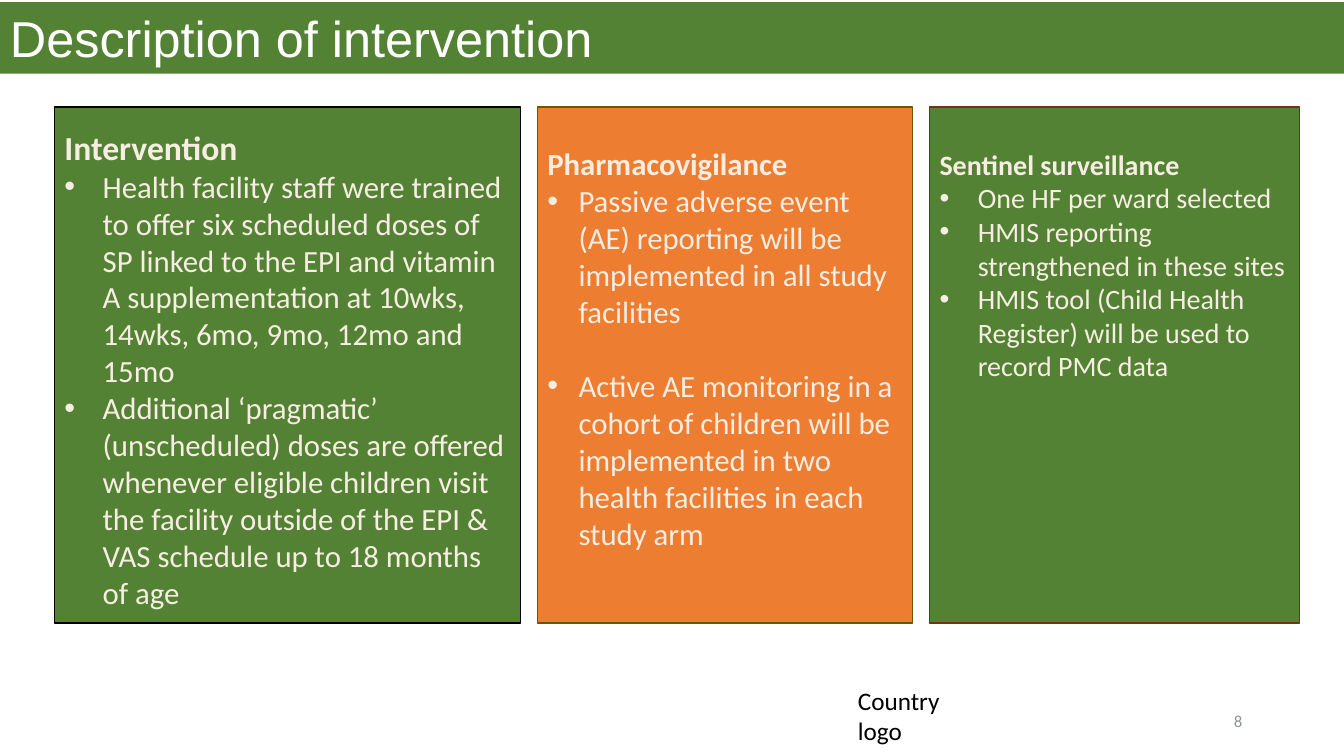
from lxml import etree
from pptx import Presentation
from pptx.dml.color import RGBColor
from pptx.enum.shapes import MSO_SHAPE
from pptx.enum.text import MSO_ANCHOR, PP_ALIGN
from pptx.oxml.ns import qn
from pptx.util import Inches, Pt

RECT = MSO_SHAPE.RECTANGLE
TOP, MIDDLE = MSO_ANCHOR.TOP, MSO_ANCHOR.MIDDLE
LEFT, RIGHT = PP_ALIGN.LEFT, PP_ALIGN.RIGHT

GREEN, ORANGE, CREAM = "548235", "ED7D31", "F7EDE3"
SLIDE_W, SLIDE_H = 13.33, 7.5
PANEL_Y, PANEL_H = 1.06, 5.12

PANELS = [
    dict(x=0.54, w=4.62, fill=GREEN, line="000000", inset=0.2, indent=0.38,
         head_size=24, size=22, gap=0, head="Intervention", items=[
             "Health facility staff were trained to offer six scheduled doses of SP "
             "linked to the EPI and vitamin A supplementation at 10wks, 14wks, 6mo, "
             "9mo, 12mo and 15mo",
             "Additional ‘pragmatic’ (unscheduled) doses are offered whenever eligible "
             "children visit the facility outside of the EPI & VAS schedule up to 18 "
             "months of age"]),
    dict(x=5.33, w=3.72, fill=ORANGE, line="705400", inset=0.38, indent=0.31,
         head_size=22, size=22, gap=26.4, head="Pharmacovigilance", items=[
             "Passive adverse event (AE) reporting will be implemented in all study "
             "facilities",
             "Active AE monitoring in a cohort of children will be implemented in two "
             "health facilities in each study arm"]),
    dict(x=9.22, w=3.67, fill=GREEN, line="683715", inset=0.4, indent=0.38,
         head_size=20, size=20, gap=0, head="Sentinel surveillance", items=[
             "One HF per ward selected",
             "HMIS reporting strengthened in these sites",
             "HMIS tool (Child Health Register) will be used to record PMC data"]),
]


def rgb(value):
    return RGBColor.from_string(value)


def add_text(tf, text, size, color, font="Calibri", bold=False, align=LEFT,
             indent=0, before=0):
    first = not tf.paragraphs[0].runs
    p = tf.paragraphs[0] if first else tf.add_paragraph()
    p.alignment = align
    p.space_before = Pt(before)
    r = p.add_run()
    r.text = text
    r.font.size, r.font.name, r.font.bold = Pt(size), font, bold
    r.font.color.rgb = rgb(color)
    if indent:
        pPr = p._p.get_or_add_pPr()
        pPr.set("marL", str(Inches(indent)))
        pPr.set("indent", str(-Inches(indent)))
        etree.SubElement(pPr, qn("a:buFont")).set("typeface", "Arial")
        etree.SubElement(pPr, qn("a:buChar")).set("char", "•")


def add_rect(s, x, y, w, h, fill, line=None):
    sp = s.shapes.add_shape(RECT, Inches(x), Inches(y), Inches(w), Inches(h))
    sp.shadow.inherit = False
    sp.fill.solid()
    sp.fill.fore_color.rgb = rgb(fill)
    if line:
        sp.line.color.rgb = rgb(line)
        sp.line.width = Pt(1)
    else:
        sp.line.fill.background()
    tf = sp.text_frame
    tf.word_wrap = True
    tf.vertical_anchor = TOP
    return tf


def add_label(s, x, y, w, h, text, anchor=TOP, **fmt):
    tf = s.shapes.add_textbox(Inches(x), Inches(y), Inches(w), Inches(h)).text_frame
    tf.word_wrap = True
    tf.vertical_anchor = anchor
    add_text(tf, text, **fmt)


def title_bar(s, x, y, w, h):
    tf = add_rect(s, x, y, w, h, GREEN)
    add_text(tf, "Description of intervention", 36, "FFFFFF", font="Arial")


def panel(s, y, h, d):
    tf = add_rect(s, d["x"], y, d["w"], h, d["fill"], d["line"])
    tf.margin_top = Inches(d["inset"])
    add_text(tf, d["head"], d["head_size"], CREAM, bold=True)
    for i, item in enumerate(d["items"]):
        add_text(tf, item, d["size"], CREAM, indent=d["indent"],
                 before=d["gap"] if i else 0)


def footer(s, x, y, w, h):
    add_label(s, x, y, 1.41, h, "Country logo", size=18, color="000000")
    add_label(s, x + w - 3, y + 0.2, 3, 0.4, "8", anchor=MIDDLE, size=12,
              color="8C9598", align=RIGHT)


def main():
    prs = Presentation()
    prs.slide_width, prs.slide_height = Inches(SLIDE_W), Inches(SLIDE_H)
    s = prs.slides.add_slide(prs.slide_layouts[6])
    title_bar(s, 0, 0.02, SLIDE_W, 0.71)
    for d in PANELS:
        panel(s, PANEL_Y, PANEL_H, d)
    footer(s, 8.41, 6.75, 4.01, 0.71)
    prs.save("out.pptx")


if __name__ == "__main__":
    main()
